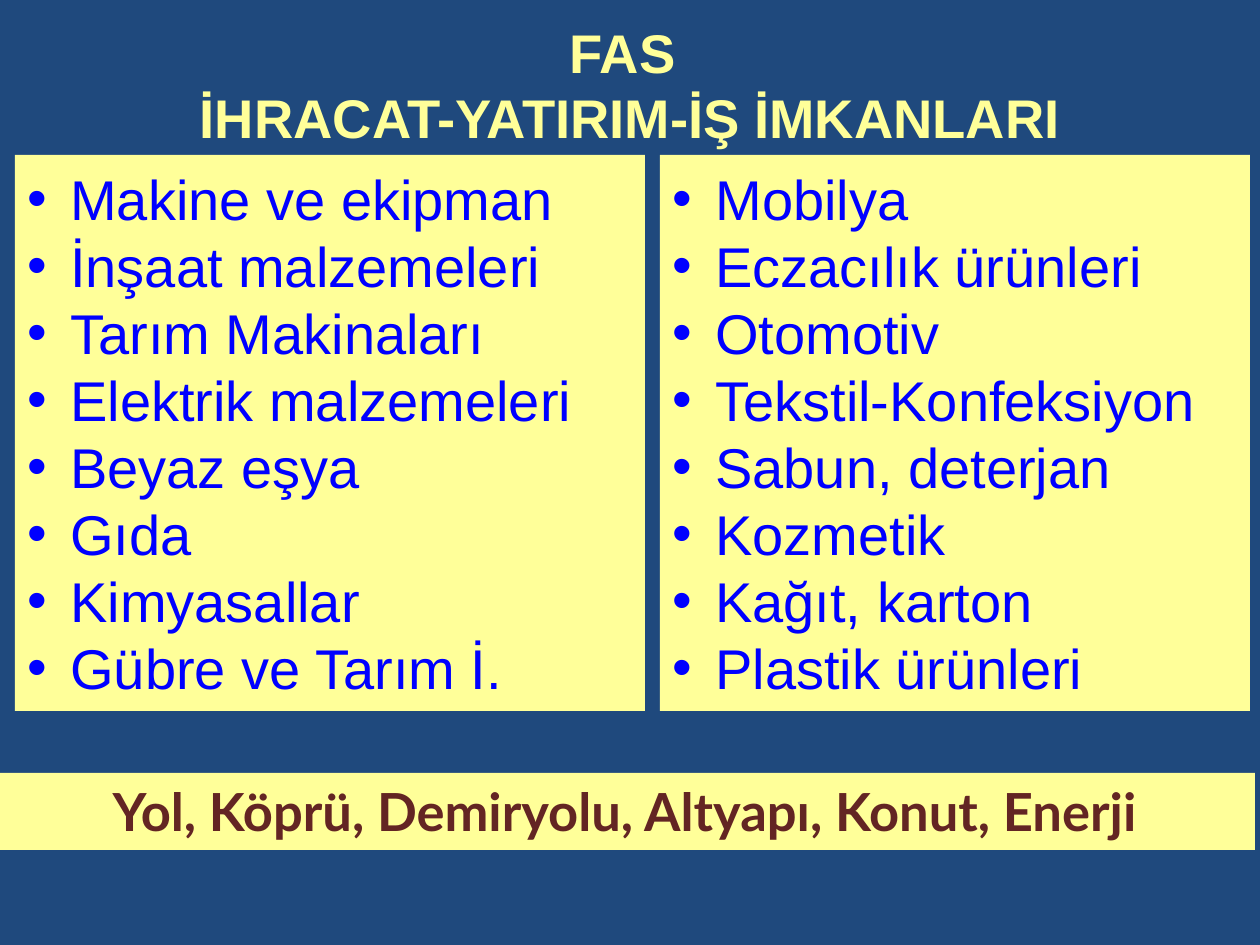
from lxml.etree import SubElement
from pptx import Presentation
from pptx.dml.color import RGBColor
from pptx.enum.shapes import MSO_SHAPE
from pptx.enum.text import MSO_ANCHOR, PP_ALIGN
from pptx.oxml.ns import qn
from pptx.util import Emu, Pt

SCALE = 914400 / 126
CREAM = "FFFF99"


def px(length):
    return Emu(round(length * SCALE))


def style(paragraph, font_name, size, color, bold=False):
    font = paragraph.font
    font.name = font_name
    font.size = Pt(size)
    font.bold = bold
    font.color.rgb = RGBColor.from_string(color)


presentation = Presentation()
presentation.slide_width = px(1260)
presentation.slide_height = px(945)
slide = presentation.slides.add_slide(presentation.slide_layouts[5])
slide.background.fill.solid()
slide.background.fill.fore_color.rgb = RGBColor.from_string("1F497D")

title = slide.shapes.title
title.left, title.top, title.width, title.height = px(0), px(0), px(1260), px(165)
title_frame = title.text_frame
title_frame.margin_top = px(10)
title_frame.margin_bottom = px(6)
title_frame.vertical_anchor = MSO_ANCHOR.MIDDLE
title_frame.text = "FAS \vİHRACAT-YATIRIM-İŞ İMKANLARI"
heading = title_frame.paragraphs[0]
heading.alignment = PP_ALIGN.CENTER
heading.line_spacing = px(65)
style(heading, "Arial", 31.1, CREAM, bold=True)

left_items = [
    "Makine ve ekipman", "İnşaat malzemeleri", "Tarım Makinaları",
    "Elektrik malzemeleri", "Beyaz eşya", "Gıda", "Kimyasallar",
    "Gübre ve Tarım İ.",
]
right_items = [
    "Mobilya", "Eczacılık ürünleri", "Otomotiv", "Tekstil-Konfeksiyon",
    "Sabun, deterjan", "Kozmetik", "Kağıt, karton", "Plastik ürünleri",
]
sectors = ["Yol, Köprü, Demiryolu, Altyapı, Konut, Enerji"]

panels = [
    (15, 155, 630, 556, left_items, True),
    (660, 155, 590, 556, right_items, True),
    (-5, 773, 1260, 77, sectors, False),
]
for left, top, width, height, items, bulleted in panels:
    panel = slide.shapes.add_shape(
        MSO_SHAPE.RECTANGLE, px(left), px(top), px(width), px(height)
    )
    panel.shadow.inherit = False
    panel.fill.solid()
    panel.fill.fore_color.rgb = RGBColor.from_string(CREAM)
    panel.line.fill.background()
    frame = panel.text_frame
    frame.word_wrap = True
    frame.vertical_anchor = MSO_ANCHOR.TOP
    frame.margin_top = px(10 if bulleted else 6)
    frame.text = "\n".join(items)
    for paragraph in frame.paragraphs:
        if bulleted:
            paragraph.alignment = PP_ALIGN.LEFT
            paragraph.line_spacing = px(67)
            properties = paragraph._p.get_or_add_pPr()
            properties.set("marL", str(px(43)))
            properties.set("indent", str(-px(43)))
            SubElement(properties, qn("a:buFont"), typeface="Arial")
            SubElement(properties, qn("a:buChar"), char="•")
            style(paragraph, "Arial", 32, "0000FF")
        else:
            paragraph.alignment = PP_ALIGN.CENTER
            style(paragraph, "Lato", 30, "632523", bold=True)

presentation.save("out.pptx")
